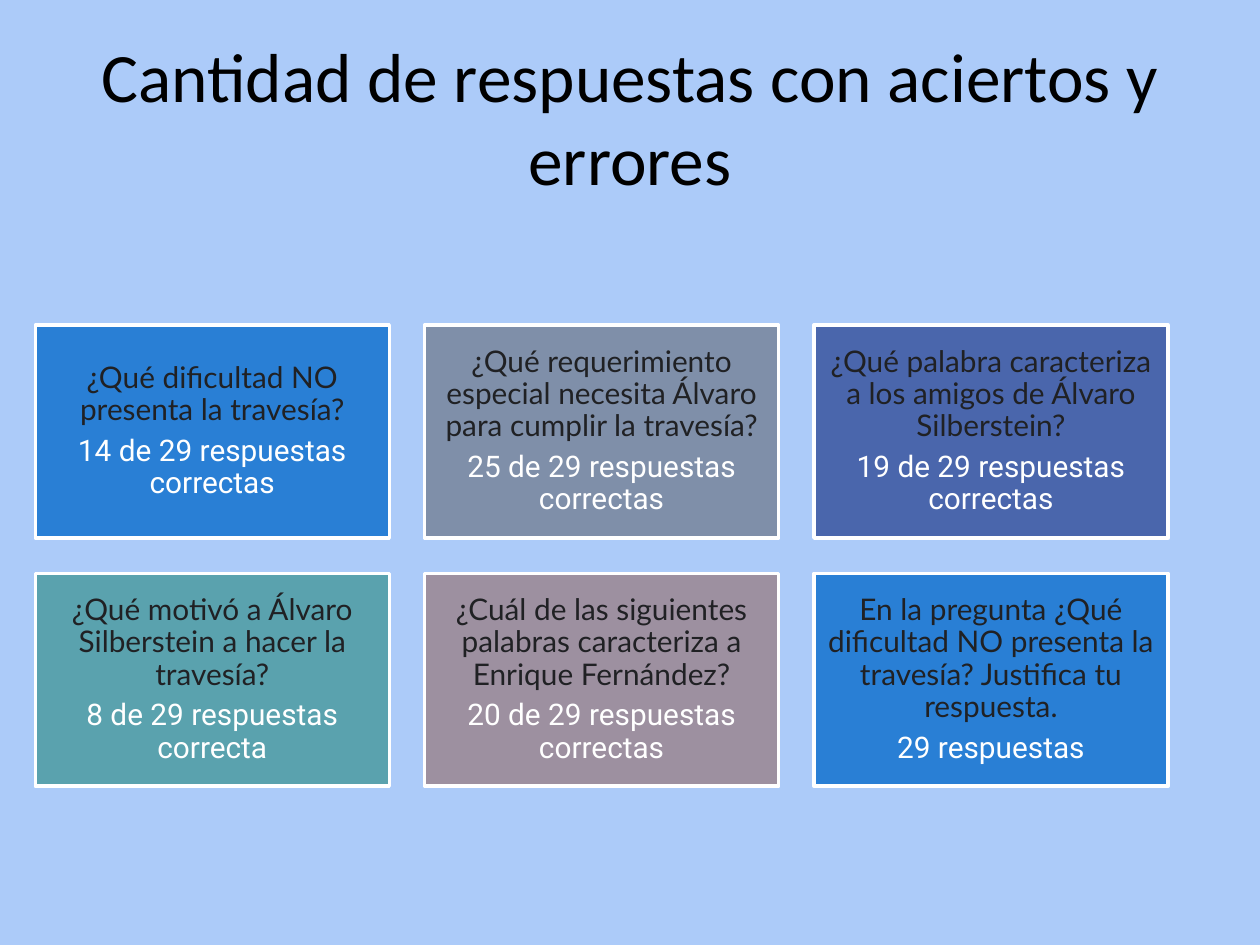
from dataclasses import dataclass

from pptx import Presentation
from pptx.dml.color import RGBColor
from pptx.enum.shapes import MSO_SHAPE
from pptx.enum.text import MSO_ANCHOR, MSO_AUTO_SIZE, PP_ALIGN
from pptx.util import Inches, Pt


@dataclass(frozen=True)
class Theme:
    """Colours, fonts and type sizes of the deck."""
    background: str = "ACCBF9"
    title_color: str = "000000"
    question_color: str = "202124"
    result_color: str = "FFFFFF"
    border_color: str = "FFFFFF"
    blue: str = "297FD5"
    slate: str = "7F8FA9"
    indigo: str = "4A66AC"
    teal: str = "5AA2AE"
    mauve: str = "9D90A0"
    title_font: str = "Calibri"
    question_font: str = "Lato"
    result_font: str = "Roboto"
    title_size: float = 39.6
    card_size: float = 17
    border_width: float = 2


class SlideBuilder:
    """Adds styled elements to one slide."""

    def __init__(self, slide, theme):
        """Keep the slide and theme, and paint the background."""
        self.slide = slide
        self.theme = theme
        self.fill(slide.background, theme.background)

    def fill(self, target, color):
        """Give a shape or background a solid colour."""
        target.fill.solid()
        target.fill.fore_color.rgb = RGBColor.from_string(color)

    def set_text(self, para, text, font, size, color):
        """Set centred paragraph text and format its runs."""
        para.text = text
        para.alignment = PP_ALIGN.CENTER
        for span in para.runs:
            span.font.name = font
            span.font.size = Pt(size)
            span.font.color.rgb = RGBColor.from_string(color)

    def title(self, text, left, top, width, height):
        """Place and fill the title placeholder."""
        box = self.slide.shapes.title
        box.left, box.top = Inches(left), Inches(top)
        box.width, box.height = Inches(width), Inches(height)
        frame = box.text_frame
        frame.word_wrap = True
        frame.auto_size = MSO_AUTO_SIZE.NONE
        frame.vertical_anchor = MSO_ANCHOR.MIDDLE
        theme = self.theme
        self.set_text(frame.paragraphs[0], text, theme.title_font,
                      theme.title_size, theme.title_color)

    def card(self, question, result, color, left, top, width, height):
        """Add a coloured card with a question and its result."""
        theme = self.theme
        box = self.slide.shapes.add_shape(
            MSO_SHAPE.RECTANGLE, Inches(left), Inches(top),
            Inches(width), Inches(height))
        box.shadow.inherit = False
        self.fill(box, color)
        box.line.color.rgb = RGBColor.from_string(theme.border_color)
        box.line.width = Pt(theme.border_width)
        frame = box.text_frame
        frame.word_wrap = True
        frame.vertical_anchor = MSO_ANCHOR.MIDDLE
        frame.margin_left = frame.margin_right = Inches(0.07)
        frame.margin_top = frame.margin_bottom = Inches(0.07)
        self.set_text(frame.paragraphs[0], question, theme.question_font,
                      theme.card_size, theme.question_color)
        self.set_text(frame.add_paragraph(), result, theme.result_font,
                      theme.card_size, theme.result_color)
        for para in frame.paragraphs:
            para.line_spacing = 0.9
            para.space_after = Pt(5)


def main():
    """Build and save the deck."""
    theme = Theme()
    deck = Presentation()
    deck.slide_width, deck.slide_height = Inches(10), Inches(7.5)
    page = SlideBuilder(deck.slides.add_slide(deck.slide_layouts[5]), theme)
    page.title("Cantidad de respuestas con aciertos y errores", 0.5, 0.3, 9, 1.25)

    cards = [
        ("¿Qué dificultad NO presenta la travesía?",
         "14 de 29 respuestas correctas", theme.blue),
        ("¿Qué requerimiento especial necesita Álvaro para cumplir la travesía?",
         "25 de 29 respuestas correctas", theme.slate),
        ("¿Qué palabra caracteriza a los amigos de Álvaro Silberstein?",
         "19 de 29 respuestas correctas", theme.indigo),
        ("¿Qué motivó a Álvaro Silberstein a hacer la travesía?",
         "8 de 29 respuestas correcta", theme.teal),
        ("¿Cuál de las siguientes palabras caracteriza a Enrique Fernández?",
         "20 de 29 respuestas correctas", theme.mauve),
        ("En la pregunta ¿Qué dificultad NO presenta la travesía? "
         "Justifica tu respuesta.", "29 respuestas", theme.blue),
    ]
    columns, width, height, gap = 3, 2.81, 1.69, 0.28
    for index, (question, result, color) in enumerate(cards):
        row, column = divmod(index, columns)
        page.card(question, result, color, 0.28 + column * (width + gap),
                  2.58 + row * (height + gap), width, height)

    deck.save("out.pptx")


if __name__ == "__main__":
    main()
